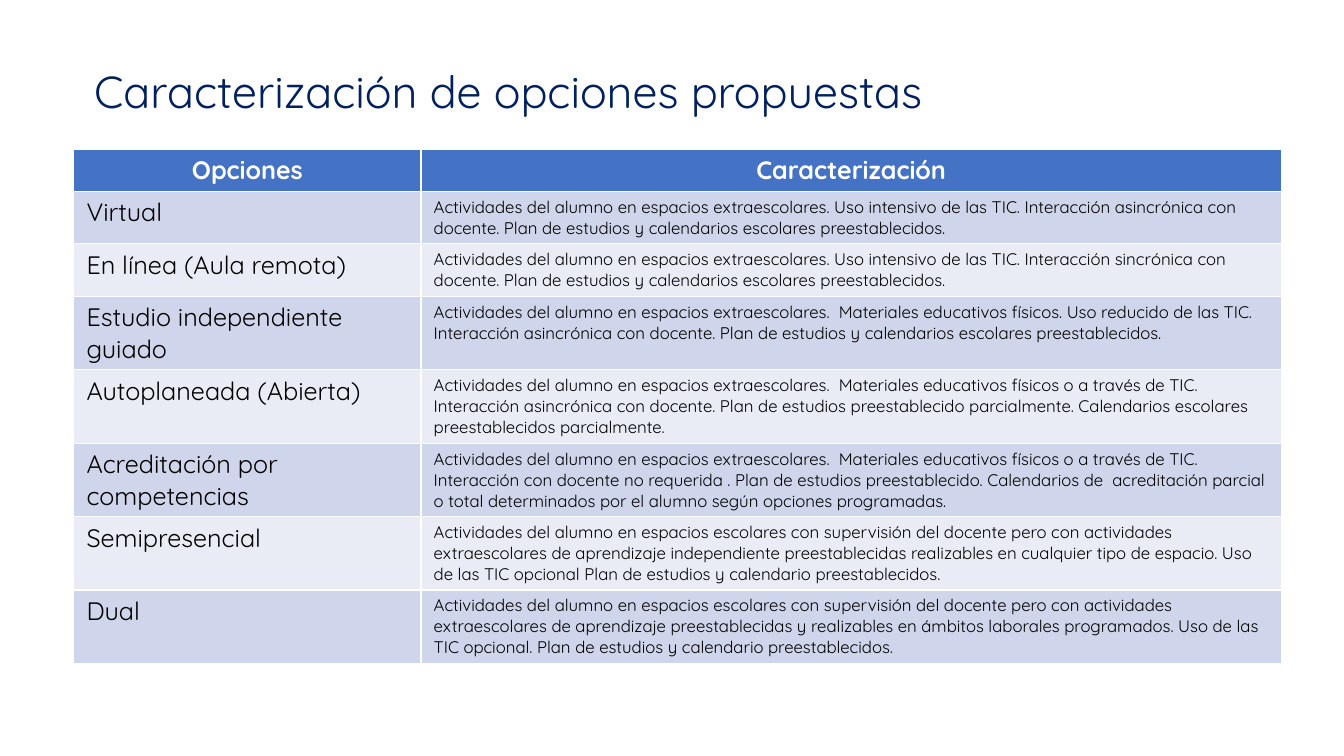
import pptx
import pptx.util
import pptx.dml.color
import pptx.enum.text

Cm = pptx.util.Cm
Pt = pptx.util.Pt
Align = pptx.enum.text.PP_ALIGN
Anchor = pptx.enum.text.MSO_ANCHOR

OUT = "Actividades del alumno en espacios extraescolares. "
IN = ("Actividades del alumno en espacios escolares con supervisión del docente "
      "pero con actividades extraescolares de aprendizaje ")
FIXED = "Plan de estudios y calendarios escolares preestablecidos."

ROWS = [
    ("Opciones", "Caracterización"),
    ("Virtual",
     OUT + "Uso intensivo de las TIC. Interacción asincrónica con docente. " + FIXED),
    ("En línea (Aula remota)",
     OUT + "Uso intensivo de las TIC. Interacción sincrónica con docente. " + FIXED),
    ("Estudio independiente guiado",
     OUT + " Materiales educativos físicos. Uso reducido de las TIC. "
     "Interacción asincrónica con docente. " + FIXED),
    ("Autoplaneada (Abierta)",
     OUT + " Materiales educativos físicos o a través de TIC. "
     "Interacción asincrónica con docente. Plan de estudios preestablecido "
     "parcialmente. Calendarios escolares preestablecidos parcialmente."),
    ("Acreditación por competencias",
     OUT + " Materiales educativos físicos o a través de TIC. "
     "Interacción con docente no requerida . Plan de estudios preestablecido. "
     "Calendarios de  acreditación parcial o total determinados por el alumno "
     "según opciones programadas."),
    ("Semipresencial",
     IN + "independiente preestablecidas realizables en cualquier tipo de espacio. "
     "Uso de las TIC opcional Plan de estudios y calendario preestablecidos."),
    ("Dual",
     IN + "preestablecidas y realizables en ámbitos laborales programados. "
     "Uso de las TIC opcional. Plan de estudios y calendario preestablecidos."),
]


def color(code):
    return pptx.dml.color.RGBColor.from_string(code)


class Deck:
    face = "Quicksand"
    head = "4472C4"
    bands = ("CFD5EA", "E9EBF5")

    def __init__(self, show):
        self.slide = show.slides.add_slide(show.slide_layouts[5])

    def style(self, para, size, code, bold=False, align=Align.LEFT):
        para.alignment = align
        para.font.name = self.face
        para.font.size = Pt(size)
        para.font.bold = bold
        para.font.color.rgb = color(code)

    def title(self, text, left, top, width, height):
        shape = self.slide.shapes.title
        shape.left, shape.top = Cm(left), Cm(top)
        shape.width, shape.height = Cm(width), Cm(height)
        frame = shape.text_frame
        frame.text = text
        frame.vertical_anchor = Anchor.MIDDLE
        para = frame.paragraphs[0]
        para.line_spacing = 0.9
        self.style(para, 32, "002060")

    def cell(self, cell, text, fill, *look):
        cell.fill.solid()
        cell.fill.fore_color.rgb = color(fill)
        cell.margin_left = cell.margin_right = Cm(0.32)
        cell.margin_top = cell.margin_bottom = Cm(0.13)
        cell.text = text
        self.style(cell.text_frame.paragraphs[0], *look)

    def table(self, rows, left, top, widths, height, step):
        frame = self.slide.shapes.add_table(
            len(rows), len(widths), Cm(left), Cm(top), Cm(sum(widths)), Cm(height))
        grid = frame.table
        for col, width in zip(grid.columns, widths):
            col.width = Cm(width)
        for i, texts in enumerate(rows):
            grid.rows[i].height = Cm(step)
            for j, text in enumerate(texts):
                if i == 0:
                    look = (self.head, 18, "FFFFFF", True, Align.CENTER)
                else:
                    look = (self.bands[(i - 1) % 2], (18, 12)[j], "000000")
                self.cell(grid.cell(i, j), text, *look)
        frame.height = Cm(height)


def main():
    show = pptx.Presentation()
    show.slide_width, show.slide_height = Cm(33.87), Cm(19.05)
    deck = Deck(show)
    deck.title("Caracterización de opciones propuestas", 2.12, 0.78, 30.48, 3.18)
    deck.table(ROWS, 1.86, 3.77, (8.75, 21.68), 12.47, 1.03)
    show.save("out.pptx")


if __name__ == "__main__":
    main()
